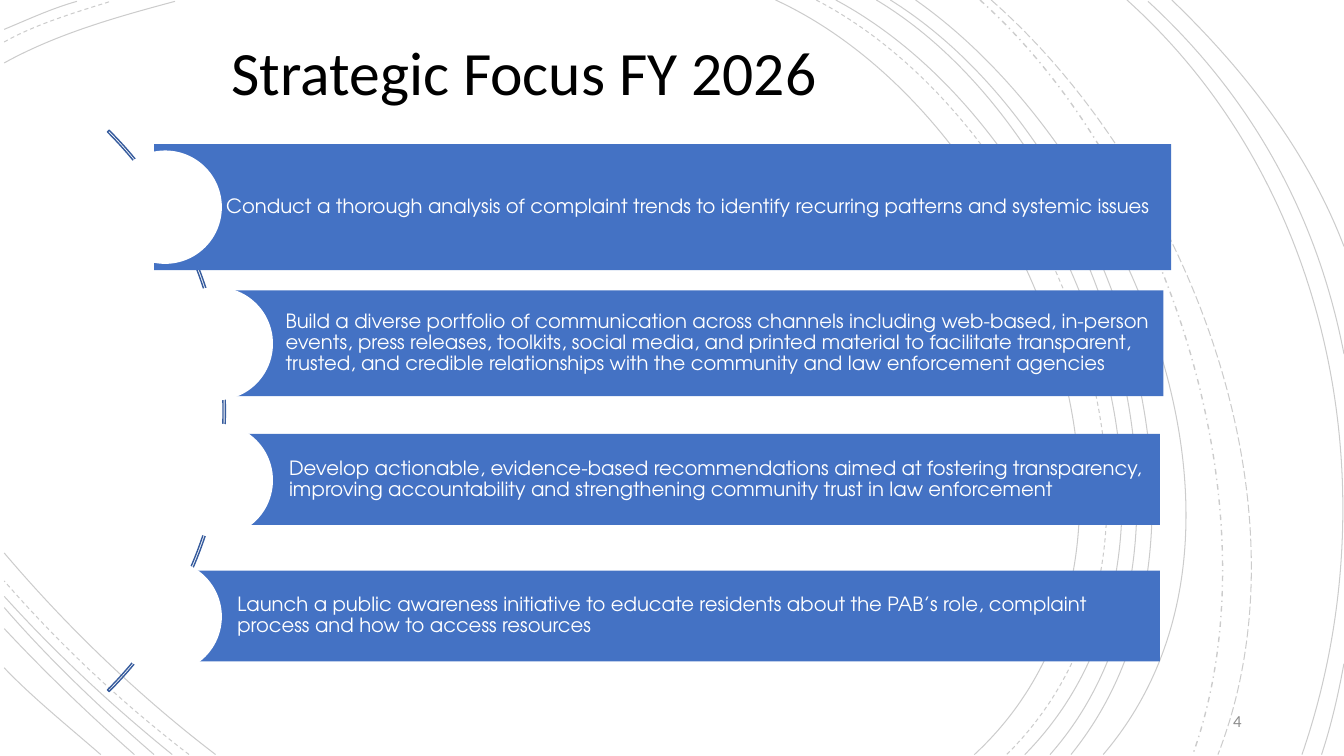
from lxml import etree
from pptx import Presentation
from pptx.dml.color import RGBColor
from pptx.enum.dml import MSO_LINE
from pptx.enum.shapes import MSO_SHAPE
from pptx.enum.text import MSO_ANCHOR, PP_ALIGN
from pptx.oxml.ns import qn
from pptx.util import Pt

SOLID, DASH = MSO_LINE.SOLID, MSO_LINE.DASH
DASH_DOT, LONG_DASH = MSO_LINE.DASH_DOT, MSO_LINE.LONG_DASH
RECT, OVAL, ARC = MSO_SHAPE.RECTANGLE, MSO_SHAPE.OVAL, MSO_SHAPE.BLOCK_ARC
TOP, MIDDLE = MSO_ANCHOR.TOP, MSO_ANCHOR.MIDDLE
LEFT, CENTER, RIGHT = PP_ALIGN.LEFT, PP_ALIGN.CENTER, PP_ALIGN.RIGHT

BLACK, WHITE, BLUE, NAVY, GREY = "000000", "FFFFFF", "4472C4", "365B9D", "8C8C8C"
HEAD_FONT, BODY_FONT = "Calibri", "TeX Gyre Adventor"

# Bezier points (start, two controls, end) by dash style
CURVES = {
    SOLID: [
        (554, 0, 734, 83, 858, 389, 696, 539),
        (597, 0, 767, 91, 882, 387, 732, 539),
        (626, 0, 786, 96, 882, 390, 750, 539),
        (636, 0, 795, 99, 891, 384, 765, 539),
        (654, 0, 805, 106, 923, 381, 788, 539),
        (805, 0, 953, 133, 994, 353, 930, 539),
        (820, 1, 894, 69, 941, 154, 960, 253),
        (837, 0, 889, 50, 934, 108, 960, 176),
        (960, 474, 956, 496, 951, 518, 944, 539),
        (3, 45, 41, 24, 84, 12, 125, 1),
        (3, 21, 20, 14, 37, 6, 55, 1),
        (154, 539, 99, 497, 48, 448, 3, 395),
        (123, 539, 81, 505, 40, 467, 3, 426),
        (110, 539, 73, 507, 36, 472, 3, 434),
        (96, 539, 63, 510, 32, 480, 3, 449),
        (72, 539, 49, 519, 23, 498, 3, 477),
    ],
    DASH: [
        (583, 0, 756, 90, 873, 387, 719, 539),
        (3, 30, 24, 18, 53, 9, 79, 1),
        (135, 539, 88, 503, 43, 461, 3, 415),
    ],
    DASH_DOT: [(700, 0, 834, 120, 914, 366, 852, 539)],
    LONG_DASH: [(708, 0, 847, 122, 940, 359, 870, 539)],
}

# Bar box, dot left, wording
GOALS = [
    ((110, 103, 726.5, 90), 77.5,
     "Conduct a thorough analysis of complaint trends to identify recurring "
     "patterns and systemic issues"),
    ((152.5, 207.5, 678.5, 75.5), 114,
     "Build a diverse portfolio of communication across channels including "
     "web-based, in-person events, press releases, toolkits, social media, and "
     "printed material to facilitate transparent, trusted, and credible "
     "relationships with the community and law enforcement agencies"),
    ((155, 310, 673.5, 65), 114,
     "Develop actionable, evidence-based recommendations aimed at fostering "
     "transparency, improving accountability and strengthening community trust "
     "in law enforcement"),
    ((118, 407.5, 710.5, 65), 77.5,
     "Launch a public awareness initiative to educate residents about the PAB’s "
     "role, complaint process and how to access resources"),
]
DOT, DOT_TOP, PITCH = 81, 107.5, 97.5


def color(code):
    return RGBColor.from_string(code)


def write(shape, text, size, font, code, align=LEFT, anchor=MIDDLE, space=1.0):
    frame = shape.text_frame
    frame.text = text
    frame.word_wrap = True
    frame.vertical_anchor = anchor
    para = frame.paragraphs[0]
    para.alignment, para.line_spacing = align, space
    style = para.runs[0].font
    style.size, style.name = Pt(size), font
    style.color.rgb = color(code)


def add_text(slide, box, *args, **kinds):
    write(slide.shapes.add_textbox(*map(Pt, box)), *args, **kinds)


def add_solid(slide, kind, box, fill):
    shape = slide.shapes.add_shape(kind, *map(Pt, box))
    shape.shadow.inherit = False
    shape.fill.solid()
    shape.fill.fore_color.rgb = color(fill)
    shape.line.fill.background()
    return shape


def add_curve(slide, points, dash):
    """Draw a faint open outline and join its three segments into one cubic."""
    start, *rest = zip(map(Pt, points[::2]), map(Pt, points[1::2]))
    pen = slide.shapes.build_freeform(*start)
    pen.add_line_segments(rest, close=False)
    curve = pen.convert_to_shape()
    props = curve.element.spPr
    route = props.find(".//" + qn("a:path"))
    legs = route.findall(qn("a:lnTo"))
    cubic = etree.SubElement(route, qn("a:cubicBezTo"))
    for leg in legs:
        cubic.append(leg[0])
        route.remove(leg)
    curve.shadow.inherit = False
    curve.fill.background()
    line = curve.line
    line.color.rgb = color(BLACK)
    line.width = Pt(1 if dash == DASH_DOT else 0.75)
    line.dash_style = dash
    tint = props.find(qn("a:ln")).find(".//" + qn("a:srgbClr"))
    etree.SubElement(tint, qn("a:alpha")).set("val", "20000")


def add_spine(slide, box):
    """Draw the thin arc that links the goals."""
    arc = slide.shapes.add_shape(ARC, *map(Pt, box))
    arc.shadow.inherit = False
    arc.fill.background()
    arc.line.color.rgb = color(NAVY)
    arc.line.width = Pt(1)
    for i, value in enumerate((189, 27, 0.003)):
        arc.adjustments[i] = value


def add_goal(slide, box, dot, text):
    bar = add_solid(slide, RECT, box, BLUE)
    write(bar, text, 14, BODY_FONT, WHITE, space=0.9)
    frame = bar.text_frame
    frame.margin_left = Pt(51.5)
    frame.margin_right = frame.margin_top = frame.margin_bottom = Pt(3)
    add_solid(slide, OVAL, dot, WHITE)


def main():
    deck = Presentation()
    deck.slide_width, deck.slide_height = Pt(960), Pt(540)
    slide = deck.slides.add_slide(deck.slide_layouts[6])
    for dash, curves in CURVES.items():
        for points in curves:
            add_curve(slide, points, dash)
    add_text(slide, (11, 26.5, 737, 64), "Strategic Focus FY 2026 ", 44,
             HEAD_FONT, BLACK, align=CENTER, anchor=TOP, space=0.9)
    add_spine(slide, (-406, 10, 567, 567))
    for i, (box, left, text) in enumerate(GOALS):
        add_goal(slide, box, (left, DOT_TOP + i * PITCH, DOT, DOT), text)
    add_text(slide, (678, 500.5, 216, 29), "4", 12, HEAD_FONT, GREY, align=RIGHT)
    deck.save("out.pptx")


if __name__ == "__main__":
    main()
